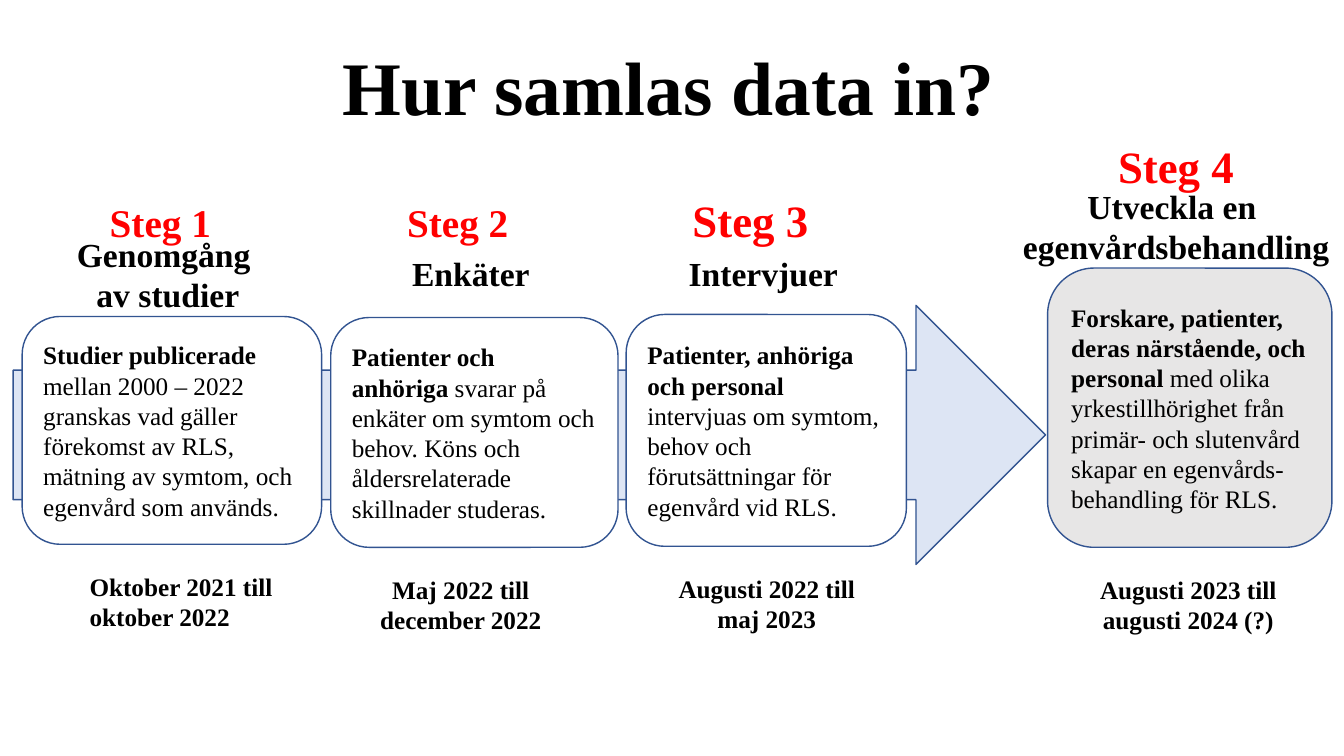
from dataclasses import dataclass

from lxml import etree
from pptx import Presentation
from pptx.dml.color import RGBColor
from pptx.enum import shapes, text
from pptx.oxml.ns import qn
from pptx.util import Inches, Pt

BLACK = RGBColor(0x00, 0x00, 0x00)
RED = RGBColor(0xFF, 0x00, 0x00)
WHITE = RGBColor(0xFF, 0xFF, 0xFF)
GREY = RGBColor(0xE7, 0xE6, 0xE6)
ARROW_BLUE = RGBColor(0x8F, 0xAA, 0xDC)
OUTLINE = RGBColor(0x32, 0x54, 0x91)
FONT = "Times New Roman"
LEFT = text.PP_ALIGN.LEFT
CENTER = text.PP_ALIGN.CENTER
DATE_GAP = 0.22


@dataclass
class Step:
    """One step; label, heading and date offsets are relative to its card."""
    card: tuple
    fill: RGBColor
    label: str
    label_box: tuple
    label_size: int
    heading: list
    heading_box: tuple
    lead: str
    body: str
    date: str
    date_left: float
    date_width: float
    date_align: int = CENTER


STEPS = [
    Step((0.22, 3.14, 2.97, 2.26), WHITE,
         "Steg 1", (0.77, -1.22, 1.4, 0.57), 28,
         ["Genomgång ", "av studier"], (0.43, -0.87, 2.03, 0.91),
         "Studier publicerade",
         " mellan 2000 – 2022 granskas vad gäller förekomst av RLS, "
         "mätning av symtom, och egenvård som används.",
         "Oktober 2021 till oktober 2022", 0.57, 2.03, LEFT),
    Step((3.28, 3.15, 2.85, 2.28), WHITE,
         "Steg 2", (0.66, -1.23, 1.3, 0.57), 28,
         ["Enkäter"], (0.7, -0.69, 1.38, 0.5),
         "Patienter och anhöriga ",
         "svarar på enkäter om symtom och behov. Köns och "
         "åldersrelaterade skillnader studeras.",
         "Maj 2022 till december 2022", 0.36, 1.86),
    Step((6.21, 3.12, 2.78, 2.3), WHITE,
         "Steg 3", (0.56, -1.26, 1.6, 0.64), 32,
         ["Intervjuer"], (0.51, -0.66, 1.7, 0.5),
         "Patienter, anhöriga och personal ",
         "intervjuas om symtom, behov och förutsättningar för "
         "egenvård vid RLS.",
         "Augusti 2022 till maj 2023", 0.38, 2.03),
    Step((10.39, 2.66, 2.82, 2.77), GREY,
         "Steg 4", (0.6, -1.33, 1.35, 0.64), 32,
         ["Utveckla en ", "egenvårdsbehandling"], (-0.36, -0.87, 3.27, 0.91),
         "Forskare, patienter, deras närstående, och personal ",
         "med olika yrkestillhörighet från primär- och slutenvård "
         "skapar en egenvårds-behandling för RLS.",
         "Augusti 2023 till augusti 2024 (?)", 0.35, 2.09),
]


def style(paragraph, size, color=BLACK, bold=None, align=LEFT):
    """Set the font and alignment of a paragraph."""
    paragraph.alignment = align
    paragraph.font.name = FONT
    paragraph.font.size = Pt(size)
    paragraph.font.bold = bold
    paragraph.font.color.rgb = color


def add_label(slide, box, lines, size, color=BLACK, align=LEFT, wrap=True):
    """Add a bold text box with one paragraph per line."""
    frame = slide.shapes.add_textbox(*map(Inches, box)).text_frame
    frame.word_wrap = wrap
    frame.auto_size = text.MSO_AUTO_SIZE.SHAPE_TO_FIT_TEXT
    frame.text = "\n".join(lines)
    for paragraph in frame.paragraphs:
        style(paragraph, size, color, True, align)


def add_outlined(slide, kind, box, fill):
    """Add a filled preset shape with the common outline."""
    shape = slide.shapes.add_shape(kind, *map(Inches, box))
    shape.shadow.inherit = False
    shape.fill.solid()
    shape.fill.fore_color.rgb = fill
    shape.line.color.rgb = OUTLINE
    shape.line.width = Pt(1)
    return shape


def add_arrow(slide, box):
    """Add the translucent arrow behind the cards."""
    arrow = add_outlined(slide, shapes.MSO_SHAPE.RIGHT_ARROW, box, ARROW_BLUE)
    color = arrow.fill._xPr.find(qn("a:solidFill"))[0]
    etree.SubElement(color, qn("a:alpha"), val="30000")


def add_step(slide, step):
    """Add a card with its label and heading above and its date below."""
    left, top, width, height = step.card

    def within(box):
        """Move a box from card offsets to slide coordinates."""
        return (left + box[0], top + box[1], *box[2:])

    card = add_outlined(slide, shapes.MSO_SHAPE.ROUNDED_RECTANGLE,
                        step.card, step.fill)
    frame = card.text_frame
    frame.word_wrap = True
    frame.vertical_anchor = text.MSO_ANCHOR.MIDDLE
    paragraph = frame.paragraphs[0]
    style(paragraph, 18)
    for words, bold in ((step.lead, True), (step.body, False)):
        run = paragraph.add_run()
        run.text = words
        run.font.bold = bold

    add_label(slide, within(step.label_box), [step.label],
              step.label_size, RED)
    add_label(slide, within(step.heading_box), step.heading, 24,
              align=CENTER, wrap=False)
    date_box = (step.date_left, height + DATE_GAP, step.date_width, 0.71)
    add_label(slide, within(date_box), [step.date], 18, align=step.date_align)


def main():
    """Build the slide and save it."""
    presentation = Presentation()
    presentation.slide_width = Inches(13.33)
    presentation.slide_height = Inches(7.5)
    slide = presentation.slides.add_slide(presentation.slide_layouts[6])
    add_label(slide, (3.3, 0.35, 6.73, 1.01), ["Hur samlas data in?"], 54,
              wrap=False)
    add_arrow(slide, (0.13, 3.03, 10.24, 2.57))
    for step in STEPS:
        add_step(slide, step)
    presentation.save("out.pptx")


if __name__ == "__main__":
    main()
